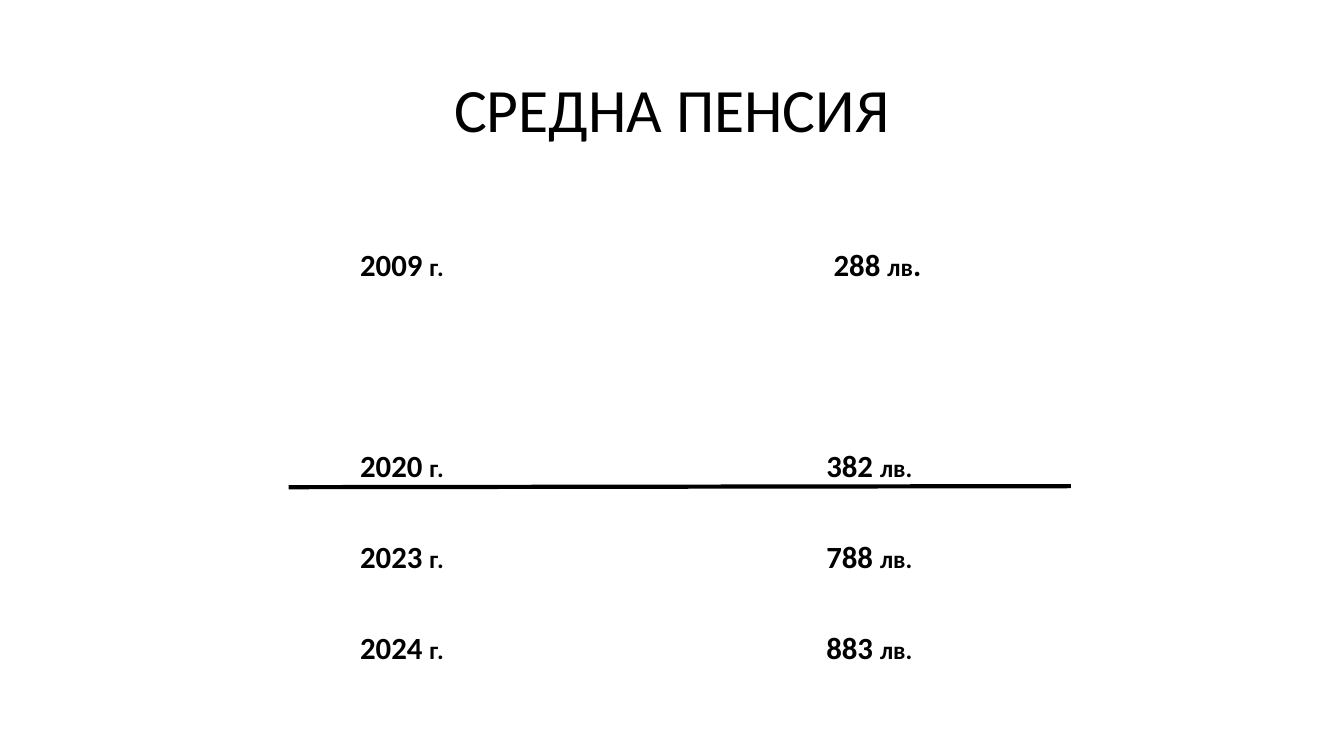
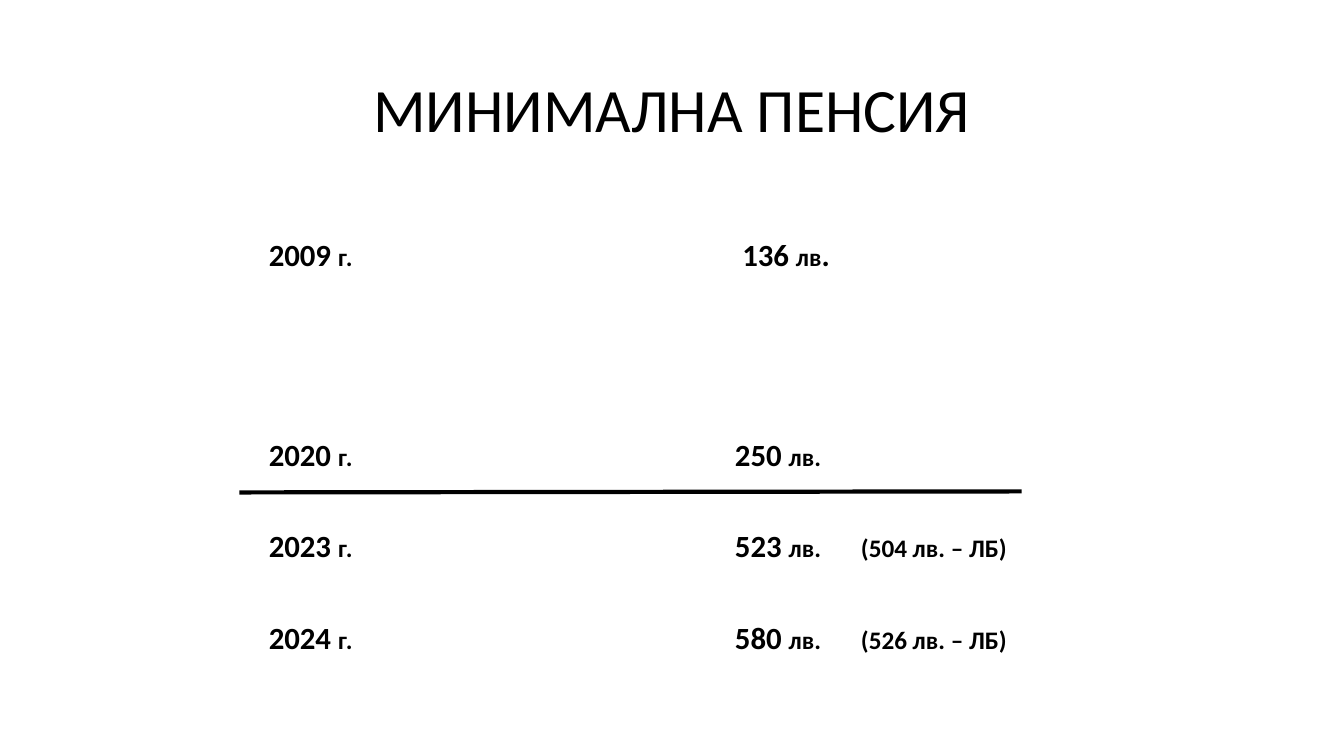
from dataclasses import dataclass

from lxml.etree import SubElement
from pptx import Presentation
from pptx.dml.color import RGBColor
from pptx.enum.shapes import MSO_CONNECTOR as CONNECTOR
from pptx.enum.text import MSO_ANCHOR as ANCHOR, PP_ALIGN as ALIGN
from pptx.oxml.ns import qn
from pptx.util import Emu, Pt


@dataclass(frozen=True)
class Theme:
    font: str = "Calibri"
    ink: RGBColor = RGBColor(0, 0, 0)
    paper: RGBColor = RGBColor(255, 255, 255)
    title_size: int = 44
    figure_size: int = 22
    unit_size: int = 18
    rule_width: int = 3


THEME = Theme()

# Each row: year, then the runs of the amount as (text, size).
BIG, SMALL = THEME.figure_size, THEME.unit_size
PENSIONS = [
    {
        "title": "СРЕДНА ПЕНСИЯ",
        "table_at": (283, 233),
        "rule_from": (275, 464),
        "rows": [
            ("2009", [("288 ", BIG), ("лв", SMALL), (".", BIG)]),
            ("2020", [("382 ", BIG), ("лв.", SMALL)]),
            ("2023", [("788 ", BIG), ("лв.", SMALL)]),
            ("2024", [("883 ", BIG), ("лв.", SMALL)]),
        ],
    },
    {
        "title": "МИНИМАЛНА ПЕНСИЯ",
        "table_at": (196, 223),
        "rule_from": (228, 469),
        "rows": [
            ("2009", [("136 ", BIG), ("лв", SMALL), (".", BIG)]),
            ("2020", [("250 ", BIG), ("лв.", SMALL)]),
            ("2023", [("523 ", BIG), ("лв.\t(504 лв. – ЛБ)", SMALL)]),
            ("2024", [("580 ", BIG), ("лв.\t(526 лв. – ЛБ)", SMALL)]),
        ],
    },
]

# Lengths in px, 96 to the inch.
SLIDE_SIZE = (1280, 720)
TITLE_BOX = (88, 38, 1104, 139)
COLUMN_WIDTH = 444
ROW_HEIGHTS = (191, 87, 87, 87)
CELL_INDENT, FIRST_AMOUNT_INDENT, CELL_MARGIN = 60, 67, 7
NOTE_TAB = 120
RULE_LENGTH, RULE_RISE = 745, 1


def px(length):
    return Emu(length * 9525)


def style_run(run, size, bold=False):
    run.font.name = THEME.font
    run.font.size = Pt(size)
    run.font.bold = bold
    run.font.color.rgb = THEME.ink


def set_title(slide, text):
    title = slide.shapes.title
    title.left, title.top, title.width, title.height = map(px, TITLE_BOX)
    frame = title.text_frame
    frame.text = text
    frame.vertical_anchor = ANCHOR.MIDDLE
    paragraph = frame.paragraphs[0]
    paragraph.alignment = ALIGN.CENTER
    paragraph.line_spacing = 0.9
    style_run(paragraph.runs[0], THEME.title_size)


def fill_cell(cell, pieces, indent):
    cell.fill.background()
    cell.margin_left, cell.margin_right = px(indent), px(CELL_MARGIN)
    cell.margin_top = cell.margin_bottom = 0
    cell.vertical_anchor = ANCHOR.TOP
    paragraph = cell.text_frame.paragraphs[0]
    paragraph.line_spacing = 1.07
    if any("\t" in text for text, _ in pieces):
        tabs = SubElement(paragraph._p.get_or_add_pPr(), qn("a:tabLst"))
        SubElement(tabs, qn("a:tab"), pos=str(px(NOTE_TAB)), algn="l")
    for text, size in pieces:
        run = paragraph.add_run()
        run.text = text
        style_run(run, size, bold=True)


def add_pension_table(slide, corner, rows):
    table = slide.shapes.add_table(
        len(rows), 2, *map(px, (*corner, 2 * COLUMN_WIDTH, sum(ROW_HEIGHTS)))
    ).table
    table.horz_banding = False
    for column in table.columns:
        column.width = px(COLUMN_WIDTH)
    for index, (year, amount) in enumerate(rows):
        table.rows[index].height = px(ROW_HEIGHTS[index])
        amount_indent = CELL_INDENT if index else FIRST_AMOUNT_INDENT
        fill_cell(table.cell(index, 0), [(year + " ", BIG), ("г.", SMALL)], CELL_INDENT)
        fill_cell(table.cell(index, 1), amount, amount_indent)


def add_rule(slide, start):
    left, top = start
    ends = (left, top, left + RULE_LENGTH, top - RULE_RISE)
    rule = slide.shapes.add_connector(CONNECTOR.STRAIGHT, *map(px, ends))
    rule.line.color.rgb = THEME.ink
    rule.line.width = Pt(THEME.rule_width)
    SubElement(rule._element.spPr, qn("a:effectLst"))


def main():
    deck = Presentation()
    deck.slide_width, deck.slide_height = map(px, SLIDE_SIZE)
    title_only = deck.slide_layouts[5]
    background = deck.slide_master.background.fill
    background.solid()
    background.fore_color.rgb = THEME.paper
    for pension in PENSIONS:
        slide = deck.slides.add_slide(title_only)
        set_title(slide, pension["title"])
        add_pension_table(slide, pension["table_at"], pension["rows"])
        add_rule(slide, pension["rule_from"])
    deck.save("out.pptx")


if __name__ == "__main__":
    main()
